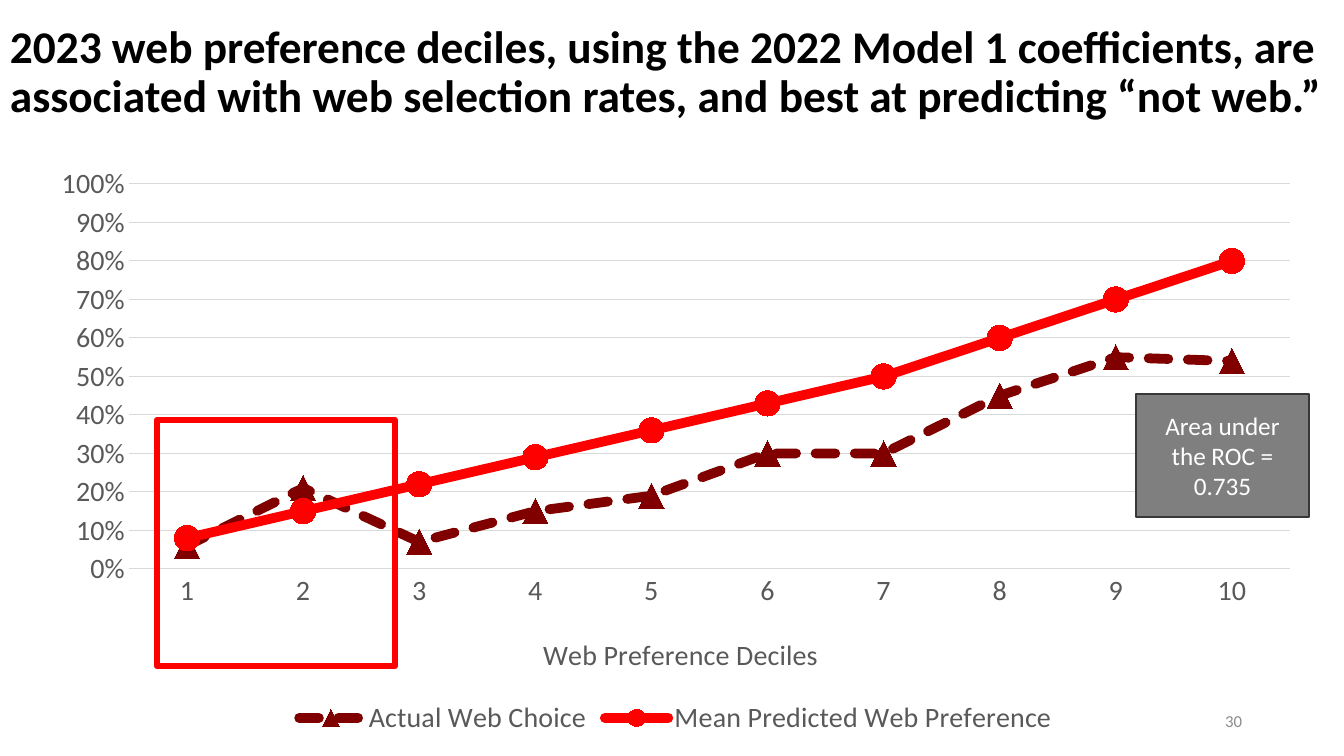
from lxml import etree
from pptx import Presentation
from pptx.chart.data import CategoryChartData
from pptx.dml.color import RGBColor
from pptx.enum.chart import XL_CHART_TYPE, XL_LEGEND_POSITION, XL_MARKER_STYLE, XL_TICK_MARK
from pptx.enum.dml import MSO_LINE
from pptx.enum.shapes import MSO_SHAPE
from pptx.enum.text import MSO_ANCHOR, PP_ALIGN
from pptx.oxml.ns import qn
from pptx.util import Emu, Pt

LEFT, CENTER, RIGHT = PP_ALIGN.LEFT, PP_ALIGN.CENTER, PP_ALIGN.RIGHT
MIDDLE = MSO_ANCHOR.MIDDLE
RECT = MSO_SHAPE.RECTANGLE
LINES = XL_CHART_TYPE.LINE_MARKERS
BOTTOM = XL_LEGEND_POSITION.BOTTOM
NO_TICK = XL_TICK_MARK.NONE
DASH, SOLID = MSO_LINE.SQUARE_DOT, MSO_LINE.SOLID
TRIANGLE, CIRCLE = XL_MARKER_STYLE.TRIANGLE, XL_MARKER_STYLE.CIRCLE

SCALE = 914400 / 100.8
FONT = "Calibri"
RED, MAROON, GRAY, PALE = "FF0000", "800000", "595959", "D9D9D9"
FRAME = (35, 155, 1281, 586)
PLOT = (129, 184, 1161, 385)
LABEL = (538, 630)

SERIES = [
    ("Actual Web Choice", MAROON, TRIANGLE, DASH,
     (0.06, 0.21, 0.07, 0.15, 0.19, 0.3, 0.3, 0.45, 0.55, 0.54)),
    ("Mean Predicted Web Preference", RED, CIRCLE, SOLID,
     (0.08, 0.15, 0.22, 0.29, 0.36, 0.43, 0.5, 0.6, 0.7, 0.8)),
]


def px(*vals):
    return [Emu(round(val * SCALE)) for val in vals]


def color(code):
    return RGBColor.from_string(code)


def set_font(font, size, code, bold=False):
    font.name = FONT
    font.size = Pt(size)
    font.bold = bold
    font.color.rgb = color(code)


def set_line(line, code, width):
    line.color.rgb = color(code)
    line.width = Pt(width)


def set_text(shape, text, size, code, align, bold=False):
    frame = shape.text_frame
    frame.word_wrap = True
    frame.vertical_anchor = MIDDLE
    para = frame.paragraphs[0]
    para.text = text
    para.alignment = align
    set_font(para.font, size, code, bold)
    return para


def add_text(slide, box, *style):
    return set_text(slide.shapes.add_textbox(*px(*box)), *style)


def add_box(slide, box, edge, width, fill=None):
    shape = slide.shapes.add_shape(RECT, *px(*box))
    shape.shadow.inherit = False
    set_line(shape.line, edge, width)
    if fill:
        shape.fill.solid()
        shape.fill.fore_color.rgb = color(fill)
    else:
        shape.fill.background()
    return shape


def set_place(parent, index, box, inner=False):
    for old in parent.findall(qn("c:layout")):
        parent.remove(old)
    layout = etree.Element(qn("c:layout"))
    manual = etree.SubElement(layout, qn("c:manualLayout"))
    left, top, wide, high = FRAME
    items = [("xMode", "edge"), ("yMode", "edge"),
             ("x", (box[0] - left) / wide), ("y", (box[1] - top) / high)]
    if inner:
        items.insert(0, ("layoutTarget", "inner"))
        items += [("w", box[2] / wide), ("h", box[3] / high)]
    for tag, val in items:
        etree.SubElement(manual, qn("c:" + tag)).set("val", str(val))
    parent.insert(index, layout)


def set_axes(chart):
    cats, vals = chart.category_axis, chart.value_axis
    for axis in (cats, vals):
        axis.major_tick_mark = axis.minor_tick_mark = NO_TICK
        set_font(axis.tick_labels.font, 20, GRAY)
    set_line(cats.format.line, PALE, 0.75)
    title = cats.axis_title
    para = title.text_frame.paragraphs[0]
    para.text = "Web Preference Deciles"
    set_font(para.font, 20, GRAY)
    set_place(title._element, 1, LABEL)
    vals.minimum_scale, vals.maximum_scale, vals.major_unit = 0, 1, 0.1
    vals.tick_labels.number_format = "0%"
    vals.tick_labels.number_format_is_linked = False
    vals.format.line.fill.background()
    set_line(vals.major_gridlines.format.line, PALE, 0.75)


def set_series(series, code, style, dash):
    series.smooth = False
    line = series.format.line
    set_line(line, code, 7)
    line.dash_style = dash
    series._element.find(".//" + qn("a:ln")).set("cap", "rnd")
    mark = series.marker
    mark.style, mark.size = style, 18
    mark.format.fill.solid()
    mark.format.fill.fore_color.rgb = color(code)
    set_line(mark.format.line, code, 0.75)


def add_graph(slide):
    data = CategoryChartData(number_format="0%")
    data.categories = [str(num) for num in range(1, 11)]
    for name, *_, vals in SERIES:
        data.add_series(name, vals)
    chart = slide.shapes.add_chart(LINES, *px(*FRAME), data).chart
    set_font(chart.font, 20, "000000")
    chart.has_title = False
    chart.has_legend = True
    chart.legend.position = BOTTOM
    chart.legend.include_in_layout = False
    set_font(chart.legend.font, 20, GRAY)
    plot = chart.plots[0]
    plot.vary_by_categories = False
    for series, (_, code, style, dash, _) in zip(plot.series, SERIES):
        set_series(series, code, style, dash)
    set_axes(chart)
    set_place(chart._chartSpace.find(".//" + qn("c:plotArea")), 0, PLOT, True)


def main():
    deck = Presentation()
    deck.slide_width, deck.slide_height = px(1344, 756)
    slide = deck.slides.add_slide(deck.slide_layouts[6])
    title = add_text(
        slide, (0, 0, 1344, 146),
        "2023 web preference deciles, using the 2022 Model 1 coefficients, are "
        "associated with web selection rates, and best at predicting “not web.”",
        32.4, "000000", LEFT, True)
    title.line_spacing = 0.9
    add_graph(slide)
    add_text(slide, (950, 701, 302, 40), "30", 12, "8C8C8C", RIGHT)
    note = add_box(slide, (1136, 394, 173, 123), "383838", 1, "7F7F7F")
    set_text(note, "Area under the ROC = 0.735", 18, "FFFFFF", CENTER)
    add_box(slide, (157, 420, 238, 246), RED, 4.5)
    deck.save("out.pptx")


if __name__ == "__main__":
    main()
